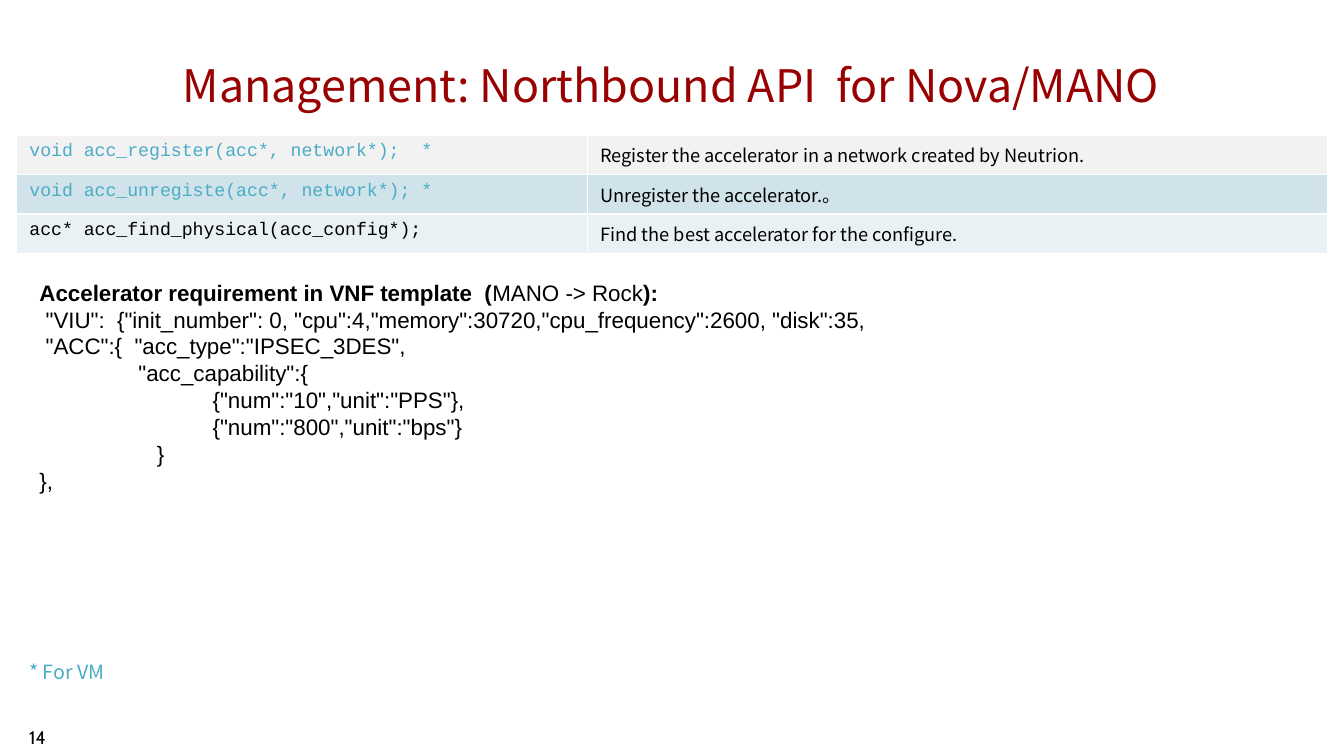
from dataclasses import dataclass

from pptx import Presentation
from pptx.dml.color import RGBColor
from pptx.enum.text import MSO_ANCHOR, MSO_AUTO_SIZE, PP_ALIGN
from pptx.util import Pt

CENTER = PP_ALIGN.CENTER
MIDDLE, TOP = MSO_ANCHOR.MIDDLE, MSO_ANCHOR.TOP
NO_FIT = MSO_AUTO_SIZE.NONE
TITLE_ONLY = 5


@dataclass(frozen=True)
class Theme:
    """Colours, fonts, type sizes and insets of the slide."""
    black: str = "000000"
    red: str = "990000"
    cyan: str = "4BACC6"
    row_fills: tuple = ("F2F2F2", "D0E3EA", "E9F1F5")
    sans: str = "Noto Sans CJK SC"
    mono: str = "Courier New"
    body: str = "Arial"
    number: str = "Cabin"
    title_size: float = 32
    template_size: float = 16
    note_size: float = 14
    small_size: float = 13
    inset_x: float = 9.5
    inset_y: float = 4.75


THEME = Theme()

API_CALLS = [
    ("void acc_register(acc*, network*);  *", THEME.cyan,
     "Register the accelerator in a network created by Neutrion."),
    ("void acc_unregiste(acc*, network*); *", THEME.cyan,
     "Unregister the accelerator.。"),
    ("acc* acc_find_physical(acc_config*);", THEME.black,
     "Find the best accelerator for the configure."),
]

TEMPLATE_HEADING = [
    ("Accelerator requirement in VNF template  (", True),
    ("MANO -> Rock", False),
    ("):", True),
]

TEMPLATE_CODE = """\
 "VIU":  {"init_number": 0, "cpu":4,"memory":30720,"cpu_frequency":2600, "disk":35,
 "ACC":{  "acc_type":"IPSEC_3DES",
                "acc_capability":{
                            {"num":"10","unit":"PPS"},
                            {"num":"800","unit":"bps"}
                   }
},"""


def add_span(para, text, name, size, color, bold=False):
    """Append one formatted run to a paragraph."""
    span = para.add_run()
    span.text = text
    for key, value in {"name": name, "size": Pt(size), "bold": bold}.items():
        setattr(span.font, key, value)
    span.font.color.rgb = RGBColor.from_string(color)


def set_margins(holder, inset_x=THEME.inset_x, inset_y=THEME.inset_y):
    """Set the insets of a text frame or a table cell."""
    for side, inset in {"left": inset_x, "right": inset_x,
                        "top": inset_y, "bottom": inset_y}.items():
        setattr(holder, f"margin_{side}", Pt(inset))


def add_box(page, box, wrap=False):
    """Add a text box and return its text frame."""
    frame = page.shapes.add_textbox(*map(Pt, box)).text_frame
    frame.word_wrap = wrap
    set_margins(frame)
    return frame


def fill_title(page, box, text):
    """Move and fill the title placeholder."""
    title = page.shapes.title
    for key, value in zip(("left", "top", "width", "height"), box):
        setattr(title, key, Pt(value))
    frame = title.text_frame
    for key, value in {"auto_size": NO_FIT, "word_wrap": True,
                       "vertical_anchor": MIDDLE}.items():
        setattr(frame, key, value)
    set_margins(frame)
    para = frame.paragraphs[0]
    para.alignment = CENTER
    add_span(para, text, THEME.sans, THEME.title_size, THEME.red)


def add_api_table(page, box, first_width):
    """Add the table of calls and their meanings."""
    table = page.shapes.add_table(len(API_CALLS), 2, *map(Pt, box)).table
    for column, width in zip(table.columns, (first_width, box[2] - first_width)):
        column.width = Pt(width)
    for row, fill, (call, color, meaning) in zip(table.rows, THEME.row_fills, API_CALLS):
        row.height = Pt(box[3] / len(API_CALLS))
        contents = ((call, THEME.mono, color), (meaning, THEME.sans, THEME.black))
        for cell, (text, name, ink) in zip(row.cells, contents):
            cell.fill.solid()
            cell.fill.fore_color.rgb = RGBColor.from_string(fill)
            cell.vertical_anchor = TOP
            set_margins(cell)
            add_span(cell.text_frame.paragraphs[0], text, name, THEME.small_size, ink)


def add_template(page, box):
    """Add the heading and the code of the VNF template."""
    frame = add_box(page, box)
    for text, bold in TEMPLATE_HEADING:
        add_span(frame.paragraphs[0], text, THEME.body, THEME.template_size,
                 THEME.black, bold)
    for line in TEMPLATE_CODE.splitlines():
        add_span(frame.add_paragraph(), line, THEME.body, THEME.template_size,
                 THEME.black)


def add_note(page, box, text):
    """Add the footnote to the table."""
    para = add_box(page, box).paragraphs[0]
    add_span(para, text, THEME.sans, THEME.note_size, THEME.cyan)


def add_page_number(page, box, text):
    """Add the page number at the lower left."""
    frame = add_box(page, box, wrap=True)
    set_margins(frame, 0, 0)
    para = frame.paragraphs[0]
    para.line_spacing = 0.85
    add_span(para, text, THEME.number, THEME.small_size, THEME.black)


def main():
    """Build the slide and save the deck."""
    deck = Presentation()
    deck.slide_width, deck.slide_height = Pt(960.48), Pt(540)
    page = deck.slides.add_slide(deck.slide_layouts[TITLE_ONLY])
    fill_title(page, (79.2, 25.9, 801.4, 68.4),
               "Management: Northbound API  for Nova/MANO")
    add_api_table(page, (11.5, 96.5, 937.4, 77), 408.2)
    add_note(page, (11.5, 466.6, 79.2, 26.6), "* For VM")
    add_template(page, (18.7, 194.4, 617, 184.3))
    add_page_number(page, (20.9, 521, 80.6, 18), "14")
    deck.save("out.pptx")


if __name__ == "__main__":
    main()
